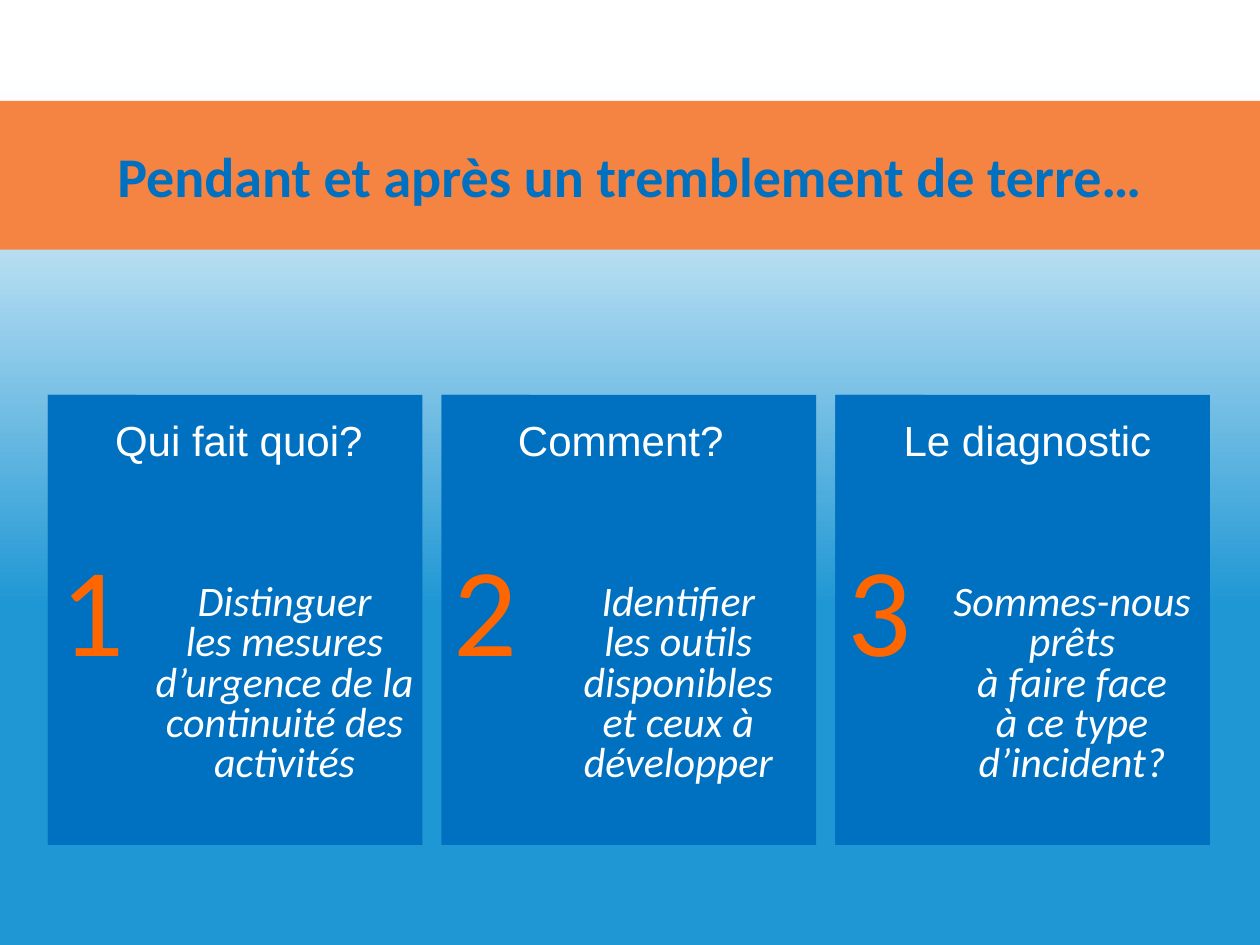
from pptx import Presentation
from pptx.dml.color import RGBColor
from pptx.enum import shapes, text
from pptx.util import Pt

BLUE, ORANGE, WHITE = "0070C0", "FF6600", "FFFFFF"
CARD_LEFT, CARD_TOP, CARD_PITCH = 27.4, 225.6, 225
CARD_WIDTH, CARD_HEIGHT, NUMBER_WIDTH = 214, 257.2, 50.4

# Heading, offset of the heading from the card, description
CARDS = [
    ("Qui fait quoi?", 27.4,
     "Distinguer\nles mesures d’urgence de la continuité des activités"),
    ("Comment?", 20.6,
     "Identifier\nles outils disponibles\net ceux à développer"),
    ("Le diagnostic", 28,
     "Sommes-nous prêts\nà faire face\nà ce type d’incident?"),
]


def color(value):
    return RGBColor.from_string(value)


def paint_background(page):
    fill = page.background.fill
    fill.gradient()
    fill.gradient_angle = 270
    for stop, (position, value) in zip(
            fill.gradient_stops, [(0.09, WHITE), (0.64, "1F97D4")]):
        stop.position = position
        stop.color.rgb = color(value)


def write(box, words, size, value, font="Calibri", spacing=None,
          bold=False, italic=False):
    """Put one centred paragraph in a shape; newlines become line breaks."""
    para = box.text_frame.paragraphs[0]
    para.text = words
    para.alignment = text.PP_ALIGN.CENTER
    if spacing:
        para.line_spacing = spacing
    para.font.name = font
    para.font.size = Pt(size)
    para.font.bold = bold
    para.font.italic = italic
    para.font.color.rgb = color(value)


def set_frame(box, margins, wrap=True):
    """Centre the text vertically, with left, top, right, bottom margins."""
    frame = box.text_frame
    frame.word_wrap = wrap
    frame.auto_size = text.MSO_AUTO_SIZE.NONE
    frame.vertical_anchor = text.MSO_ANCHOR.MIDDLE
    (frame.margin_left, frame.margin_top,
     frame.margin_right, frame.margin_bottom) = map(Pt, margins)


def add_title(page, words):
    title = page.shapes.title
    title.left, title.top = Pt(0), Pt(57.6)
    title.width, title.height = Pt(720), Pt(85)
    title.fill.solid()
    title.fill.fore_color.rgb = color("F58342")
    set_frame(title, (7.2, 3.6, 7.2, 3.6))
    write(title, words, 32, BLUE, bold=True)


def add_panel(page, left, width):
    panel = page.shapes.add_shape(
        shapes.MSO_SHAPE.RECTANGLE,
        Pt(left), Pt(CARD_TOP), Pt(width), Pt(CARD_HEIGHT))
    panel.shadow.inherit = False
    panel.fill.solid()
    panel.fill.fore_color.rgb = color(BLUE)
    panel.line.fill.background()
    return panel


def add_card(page, left, number, heading, heading_offset, description):
    card = add_panel(page, left, CARD_WIDTH)
    # The deep top margin keeps the description below the heading.
    set_frame(card, (60, 78, 3.6, 3.6))
    write(card, description, 24, WHITE, spacing=0.8, italic=True)

    number_panel = add_panel(page, left, NUMBER_WIDTH)
    set_frame(number_panel, (0, 0, 0, 0), wrap=False)
    write(number_panel, str(number), 72, ORANGE, spacing=0.8)

    label = page.shapes.add_textbox(
        Pt(left + heading_offset), Pt(233.3), Pt(163.4), Pt(36))
    label.text_frame.word_wrap = True
    write(label, heading, 24, WHITE, font="Arial")


def main():
    deck = Presentation()
    deck.slide_width, deck.slide_height = Pt(720), Pt(540)
    page = deck.slides.add_slide(deck.slide_layouts.get_by_name("Title Only"))
    paint_background(page)
    add_title(page, "Pendant et après un tremblement de terre…")
    for index, card in enumerate(CARDS):
        add_card(page, CARD_LEFT + index * CARD_PITCH, index + 1, *card)
    deck.save("out.pptx")


if __name__ == "__main__":
    main()
